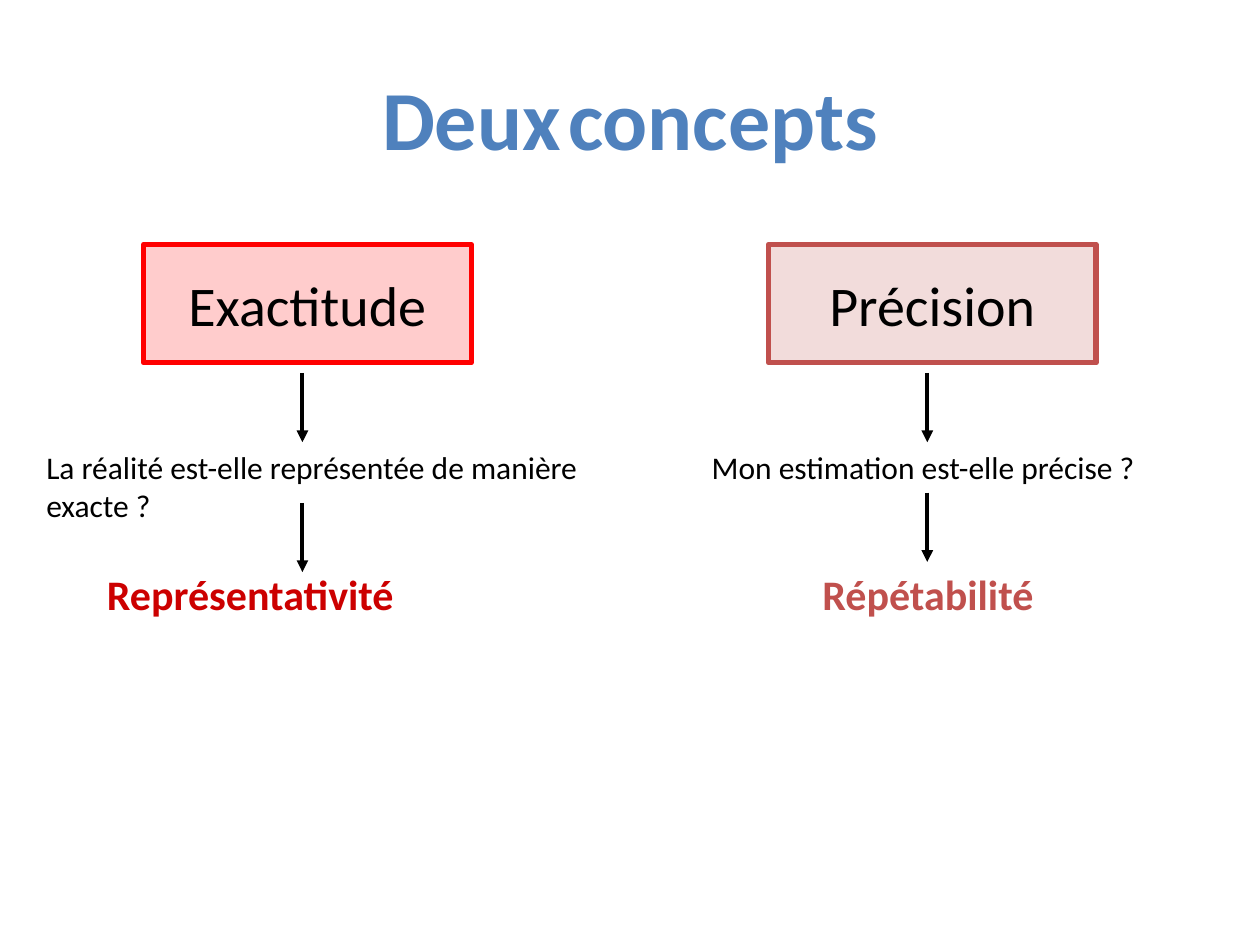
from dataclasses import dataclass

from lxml import etree
from pptx import Presentation
from pptx.dml.color import RGBColor
from pptx.enum.shapes import MSO_CONNECTOR, MSO_SHAPE
from pptx.enum.text import MSO_ANCHOR, MSO_AUTO_SIZE, PP_ALIGN
from pptx.oxml.ns import qn
from pptx.util import Pt

RECTANGLE = MSO_SHAPE.RECTANGLE
STRAIGHT = MSO_CONNECTOR.STRAIGHT
MIDDLE = MSO_ANCHOR.MIDDLE
FIT_TEXT = MSO_AUTO_SIZE.SHAPE_TO_FIT_TEXT
LEFT, CENTER = PP_ALIGN.LEFT, PP_ALIGN.CENTER
TITLE_ONLY = 5


@dataclass(frozen=True)
class Theme:
    font: str = "Calibri"
    title: str = "4F81BD"
    ink: str = "000000"
    title_size: int = 48
    gap_size: int = 18
    concept_size: int = 32
    question_size: int = 18
    answer_size: int = 24


THEME = Theme()

# Rows shared by both columns, in points
CONCEPT_TOP, CONCEPT_WIDTH, CONCEPT_HEIGHT = 139.7, 187.2, 67.7
QUESTION_TOP, QUESTION_HEIGHT = 252.7, 28.8
ANSWER_TOP, ANSWER_WIDTH, ANSWER_HEIGHT = 321.1, 238.3, 36
FIRST_ARROW_TOP, ARROW_LENGTH, ARROW_OFFSET = 213.1, 39.6, 90.7

# One entry per concept column; x positions in points
COLUMNS = [
    dict(concept="Exactitude", accent="FF0000", concept_left=82.1,
         question="La réalité est-elle représentée de manière exacte ?",
         question_left=19.4, question_width=329,
         answer="Représentativité", answer_color="CC0000",
         answer_left=54, answer_align=LEFT, second_arrow_top=287.3),
    dict(concept="Précision", accent="C0504D", concept_left=439.2,
         question="Mon estimation est-elle précise ?",
         question_left=399.6, question_width=275,
         answer="Répétabilité", answer_color="C0504D",
         answer_left=411.1, answer_align=CENTER, second_arrow_top=281.5),
]


def add_run(paragraph, text, size, color, bold=False):
    run = paragraph.add_run()
    run.text = text
    run.font.name = THEME.font
    run.font.size = Pt(size)
    run.font.bold = bold
    run.font.color.rgb = RGBColor.from_string(color)


def add_title(slide):
    title = slide.shapes.title
    title.left, title.top, title.width, title.height = Pt(36), Pt(21.6), Pt(648), Pt(90)
    title.text_frame.vertical_anchor = MIDDLE
    line = title.text_frame.paragraphs[0]
    line.alignment = CENTER
    add_run(line, "Deux", THEME.title_size, THEME.title, bold=True)
    add_run(line, " ", THEME.gap_size, THEME.ink)
    add_run(line, "concepts", THEME.title_size, THEME.title, bold=True)


def add_concept(slide, text, left, accent):
    box = slide.shapes.add_shape(RECTANGLE, Pt(left), Pt(CONCEPT_TOP),
                                 Pt(CONCEPT_WIDTH), Pt(CONCEPT_HEIGHT))
    box.shadow.inherit = False
    box.fill.solid()
    box.fill.fore_color.rgb = RGBColor.from_string(accent)
    box.line.color.rgb = RGBColor.from_string(accent)
    box.line.width = Pt(3)
    # Fill at 20 % opacity
    fill_color = box.fill._xPr.find(qn("a:solidFill"))[0]
    etree.SubElement(fill_color, qn("a:alpha"), val="20000")
    frame = box.text_frame
    frame.word_wrap = False
    frame.vertical_anchor = MIDDLE
    frame.paragraphs[0].alignment = CENTER
    add_run(frame.paragraphs[0], text, THEME.concept_size, THEME.ink)


def add_label(slide, text, left, top, width, height, size, color,
              bold=False, align=LEFT):
    label = slide.shapes.add_textbox(Pt(left), Pt(top), Pt(width), Pt(height))
    frame = label.text_frame
    frame.word_wrap = True
    frame.auto_size = FIT_TEXT
    frame.paragraphs[0].alignment = align
    add_run(frame.paragraphs[0], text, size, color, bold)


def add_down_arrow(slide, x, top):
    arrow = slide.shapes.add_connector(STRAIGHT, Pt(x), Pt(top),
                                       Pt(x), Pt(top + ARROW_LENGTH))
    arrow.line.color.rgb = RGBColor.from_string(THEME.ink)
    arrow.line.width = Pt(2.25)
    etree.SubElement(arrow.line._get_or_add_ln(), qn("a:tailEnd"), type="triangle")
    etree.SubElement(arrow._element.spPr, qn("a:effectLst"))


def add_column(slide, column):
    # Concept, then the question it raises, then the answer
    add_concept(slide, column["concept"], column["concept_left"], column["accent"])
    add_label(slide, column["question"], column["question_left"], QUESTION_TOP,
              column["question_width"], QUESTION_HEIGHT,
              THEME.question_size, THEME.ink)
    add_label(slide, column["answer"], column["answer_left"], ANSWER_TOP,
              ANSWER_WIDTH, ANSWER_HEIGHT, THEME.answer_size,
              column["answer_color"], bold=True, align=column["answer_align"])
    # Arrows linking the three steps
    for top in (FIRST_ARROW_TOP, column["second_arrow_top"]):
        add_down_arrow(slide, column["concept_left"] + ARROW_OFFSET, top)


def main():
    deck = Presentation()
    deck.slide_width, deck.slide_height = Pt(720), Pt(540)
    slide = deck.slides.add_slide(deck.slide_layouts[TITLE_ONLY])
    add_title(slide)
    for column in COLUMNS:
        add_column(slide, column)
    deck.save("out.pptx")


if __name__ == "__main__":
    main()
